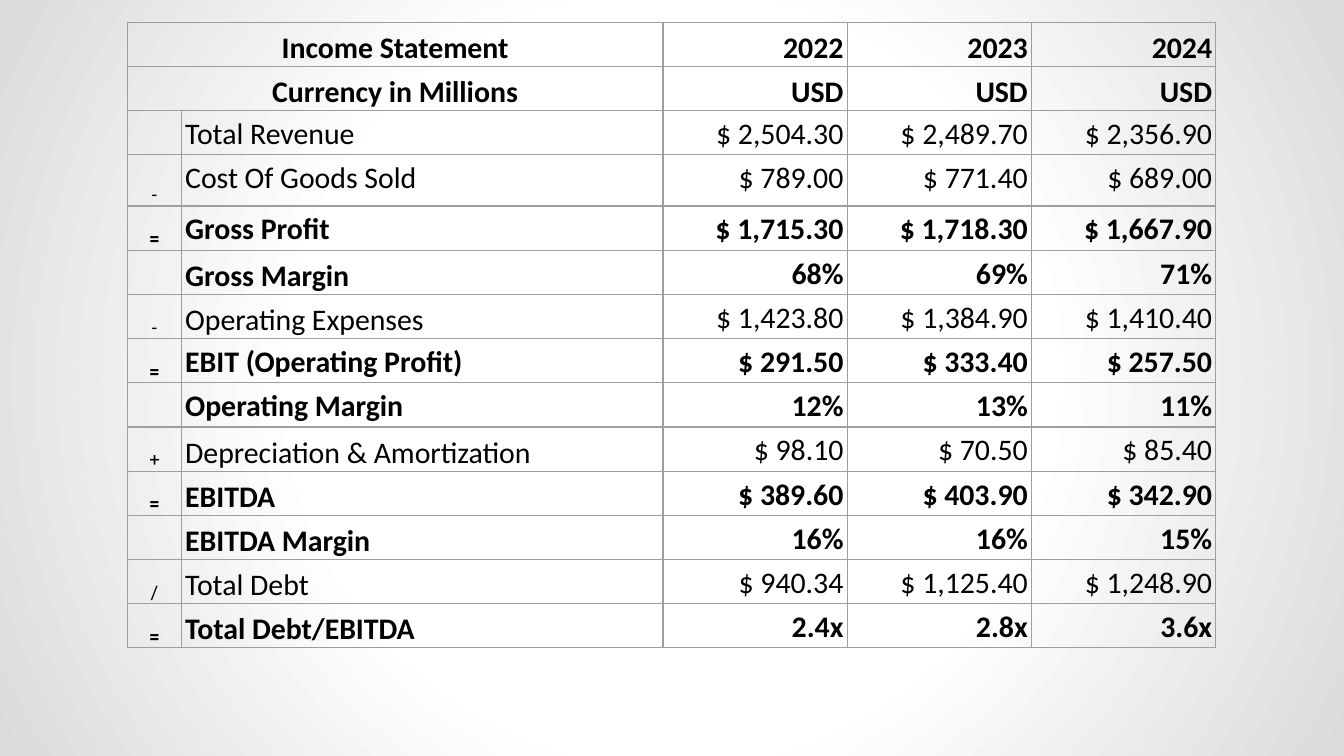
import pptx
import pptx.dml.color
import pptx.enum.text
import pptx.oxml
import pptx.oxml.ns
import pptx.util
import lxml.etree

Cm = pptx.util.Cm
Pt = pptx.util.Pt
ALIGN = pptx.enum.text.PP_ALIGN
ANCHOR = pptx.enum.text.MSO_ANCHOR

HEADERS = [
    ("Income Statement", ["2022", "2023", "2024"]),
    ("Currency in Millions", ["USD", "USD", "USD"]),
]
LINES = [
    ("", "Total Revenue", ["$ 2,504.30", "$ 2,489.70", "$ 2,356.90"]),
    ("-", "Cost Of Goods Sold", ["$ 789.00", "$ 771.40", "$ 689.00"]),
    ("=", "Gross Profit", ["$ 1,715.30", "$ 1,718.30", "$ 1,667.90"]),
    ("", "Gross Margin", ["68%", "69%", "71%"]),
    ("-", "Operating Expenses", ["$ 1,423.80", "$ 1,384.90", "$ 1,410.40"]),
    ("=", "EBIT (Operating Profit)", ["$ 291.50", "$ 333.40", "$ 257.50"]),
    ("", "Operating Margin", ["12%", "13%", "11%"]),
    ("+", "Depreciation & Amortization", ["$ 98.10", "$ 70.50", "$ 85.40"]),
    ("=", "EBITDA", ["$ 389.60", "$ 403.90", "$ 342.90"]),
    ("", "EBITDA Margin", ["16%", "16%", "15%"]),
    ("/", "Total Debt", ["$ 940.34", "$ 1,125.40", "$ 1,248.90"]),
    ("=", "Total Debt/EBITDA", ["2.4x", "2.8x", "3.6x"]),
]
TOP_LABELS = {"Total Revenue", "Cost Of Goods Sold", "Gross Profit",
              "EBIT (Operating Profit)", "Operating Margin"}
TALL_LABEL = "Cost Of Goods Sold"
TALL_HEIGHT = Cm(0.97)
COLUMN_WIDTHS = [1.02, 9.09, 3.48, 3.48, 3.48]


def color(value):
    """Return the colour for a hex string."""
    return pptx.dml.color.RGBColor.from_string(value)


def paint_background(page):
    """Fill the page with a soft radial gradient."""
    page.background.fill.solid()
    solid = page.element.xpath(".//p:bgPr/a:solidFill")[0]
    stops = "".join(
        f'<a:gs pos="{position}000"><a:srgbClr val="{value}"/></a:gs>'
        for position, value in [(0, "FFFFFF"), (48, "FFFFFF"), (100, "DBDBDB")])
    gradient = pptx.oxml.parse_xml(
        f'<a:gradFill {pptx.oxml.ns.nsdecls("a")} rotWithShape="1">'
        f'<a:gsLst>{stops}</a:gsLst><a:path path="circle">'
        '<a:fillToRect l="50000" t="50000" r="50000" b="50000"/>'
        '</a:path></a:gradFill>')
    solid.getparent().replace(solid, gradient)


def draw_borders(cell, value, width):
    """Give a cell the same thin line on all four sides."""
    properties = cell._tc.get_or_add_tcPr()
    for index, side in enumerate(["lnL", "lnR", "lnT", "lnB"]):
        line = lxml.etree.Element(pptx.oxml.ns.qn(f"a:{side}"), w=str(width))
        fill = lxml.etree.SubElement(line, pptx.oxml.ns.qn("a:solidFill"))
        lxml.etree.SubElement(fill, pptx.oxml.ns.qn("a:srgbClr"), val=value)
        properties.insert(index, line)


def write_cell(cell, text, align, anchor, bold, size=16, font="Calibri"):
    """Write one formatted paragraph into a cell."""
    cell.vertical_anchor = anchor
    if not text:
        return
    para = cell.text_frame.paragraphs[0]
    para.alignment = align
    para.line_spacing = 1.15
    span = para.add_run()
    span.text = text
    span.font.size = Pt(size)
    span.font.name = font
    span.font.bold = bold
    span.font.color.rgb = color("000000")


def write_values(table, row, values, anchor, bold):
    """Write the yearly values of a row, right aligned."""
    for column, value in enumerate(values, start=2):
        write_cell(table.cell(row, column), value, ALIGN.RIGHT, anchor, bold)


def add_income_statement(page, left, top, width, height):
    """Place the income statement table in the given box."""
    count = len(HEADERS) + len(LINES)
    table = page.shapes.add_table(
        count, len(COLUMN_WIDTHS), left, top, width, height).table
    table.first_row = False
    table.horz_banding = False
    for column, share in zip(table.columns, COLUMN_WIDTHS):
        column.width = int(width * share / sum(COLUMN_WIDTHS))
    for row in table.rows:
        row.height = (height - TALL_HEIGHT) // (count - 1)
    for cell in table.iter_cells():
        cell.margin_left = cell.margin_right = Cm(0.07)
        cell.margin_top = cell.margin_bottom = 0
        cell.fill.background()
        draw_borders(cell, "9E9E9E", Pt(0.75))

    for row, (title, values) in enumerate(HEADERS):
        heading = table.cell(row, 0)
        heading.merge(table.cell(row, 1))
        write_cell(heading, title, ALIGN.CENTER, ANCHOR.BOTTOM, True)
        write_values(table, row, values, ANCHOR.BOTTOM, True)

    for row, (sign, label, values) in enumerate(LINES, start=len(HEADERS)):
        bold = sign == "=" or label.endswith("Margin")
        anchor = ANCHOR.TOP if label in TOP_LABELS else ANCHOR.BOTTOM
        if label == TALL_LABEL:
            table.rows[row].height = TALL_HEIGHT
        write_cell(table.cell(row, 0), sign, ALIGN.CENTER, ANCHOR.BOTTOM,
                   bold, 10, "Roboto")
        write_cell(table.cell(row, 1), label, ALIGN.LEFT, anchor, bold)
        write_values(table, row, values, ANCHOR.TOP, bold)


def main():
    """Build the deck and save it."""
    deck = pptx.Presentation()
    deck.slide_width = Cm(25.4)
    deck.slide_height = Cm(14.29)
    page = deck.slides.add_slide(deck.slide_layouts[6])
    paint_background(page)
    add_income_statement(page, Cm(2.41), Cm(0.42), Cm(20.57), Cm(11.83))
    deck.save("out.pptx")


if __name__ == "__main__":
    main()
